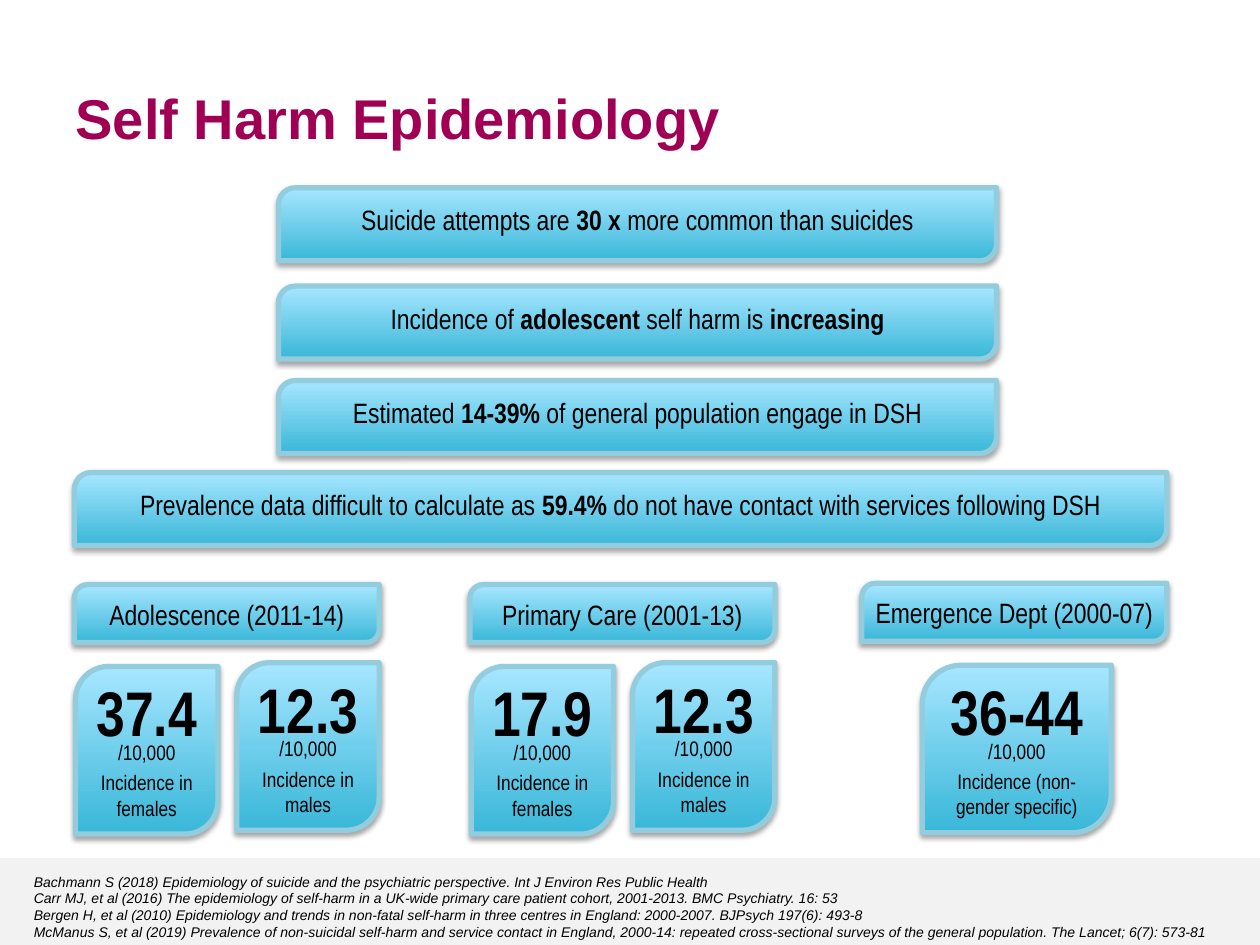
from dataclasses import dataclass

from lxml.etree import SubElement
from pptx import Presentation
from pptx.dml.color import RGBColor
from pptx.enum.shapes import MSO_SHAPE
from pptx.enum.text import MSO_ANCHOR, PP_ALIGN
from pptx.oxml.ns import qn
from pptx.util import Inches, Pt


@dataclass(frozen=True)
class Theme:
    title: str = "A00054"
    ink: str = "000000"
    edge: str = "93CDDD"
    deep: str = "39B7D8"
    pale: str = "A7E6FF"
    band: str = "F2F2F2"
    head: str = "Arial"
    body: str = "Arial Narrow"
    title_size: int = 32
    figure_size: int = 36
    text_size: int = 16
    note_size: int = 12
    cite_size: int = 8


class Deck:
    """Draws styled elements on a slide grid of 100 columns by 75 rows."""

    def __init__(self, theme):
        self.theme = theme
        self.file = Presentation()
        self.file.slide_width, self.file.slide_height = Inches(10), Inches(7.5)
        self.slide = self.file.slides.add_slide(self.file.slide_layouts[5])

    def place(self, left, top, width, height):
        col, row = self.file.slide_width / 100, self.file.slide_height / 75
        return [round(n) for n in (left * col, top * row, width * col, height * row)]

    def style(self, run, size, color, face, bold=False, italic=False):
        font = run.font
        font.name, font.size = face, Pt(size)
        font.bold, font.italic = bold, italic
        font.color.rgb = RGBColor.from_string(color)

    def title(self, text, *spot):
        shape = self.slide.shapes.title
        shape.left, shape.top, shape.width, shape.height = self.place(*spot)
        frame = shape.text_frame
        frame.text = text
        frame.vertical_anchor = MSO_ANCHOR.MIDDLE
        para = frame.paragraphs[0]
        para.alignment = PP_ALIGN.LEFT
        look = self.theme
        self.style(para.runs[0], look.title_size, look.title, look.head, bold=True)

    def text(self, lines, size, *spot, face=None, align=PP_ALIGN.CENTER, gap=0, italic=False):
        frame = self.slide.shapes.add_textbox(*self.place(*spot)).text_frame
        frame.word_wrap = True
        for index, line in enumerate(lines):
            para = frame.add_paragraph() if index else frame.paragraphs[0]
            para.alignment = align
            if index:
                para.space_before = Pt(gap)
            for part, words in enumerate(line.split("**")):
                if words:
                    run = para.add_run()
                    run.text = words
                    self.style(run, size, self.theme.ink, face or self.theme.body,
                               bold=part % 2 == 1, italic=italic)

    def band(self, *spot):
        shape = self.slide.shapes.add_shape(MSO_SHAPE.RECTANGLE, *self.place(*spot))
        shape.shadow.inherit = False
        shape.fill.solid()
        shape.fill.fore_color.rgb = RGBColor.from_string(self.theme.band)
        shape.line.fill.background()

    def panel(self, *spot):
        shape = self.slide.shapes.add_shape(
            MSO_SHAPE.ROUND_2_DIAG_RECTANGLE, *self.place(*spot))
        shape.adjustments[0], shape.adjustments[1] = 0.231, 0
        shape.fill.gradient()
        shape.fill.gradient_angle = 90
        for stop, color in zip(shape.fill.gradient_stops, (self.theme.deep, self.theme.pale)):
            stop.color.rgb = RGBColor.from_string(color)
        shape.line.color.rgb = RGBColor.from_string(self.theme.edge)
        shape.line.width = Pt(3)
        self.shade(shape)

    def shade(self, shape):
        shape.shadow.inherit = False
        effects = shape._element.spPr.find(qn("a:effectLst"))
        outer = SubElement(effects, qn("a:outerShdw"), blurRad=str(Pt(3.1)),
                           dist=str(Pt(1.8)), dir="5400000", rotWithShape="0")
        color = SubElement(outer, qn("a:srgbClr"), val=self.theme.ink)
        SubElement(color, qn("a:alpha"), val="35000")

    def bar(self, line, left, top, width, height=5.8, drop=0.7):
        self.panel(left, top, width, height)
        self.text([line], self.theme.text_size, left, top + drop, width, 3.8)

    def card(self, figure, note, left, top, width):
        self.panel(left, top, width, 13.3)
        self.text(["/10,000", note], self.theme.note_size, left, top + 5.3, width, 3.3, gap=3)
        self.text([f"**{figure}**"], self.theme.figure_size, left, top + 0.1, width, 7.3)

    def cites(self, lines, *spot):
        self.text(lines, self.theme.cite_size, *spot, face=self.theme.head,
                  align=PP_ALIGN.LEFT, italic=True)


FACTS = [
    ("Suicide attempts are **30 x** more common than suicides", 22.1, 14.9, 57),
    ("Incidence of **adolescent** self harm is **increasing**", 22.1, 22.7, 57),
    ("Estimated **14-39%** of general population engage in DSH", 22.1, 30.2, 57),
    ("Prevalence data difficult to calculate as **59.4%** do not have contact"
     " with services following DSH", 5.9, 37.5, 86.7),
]
FEMALE, MALE = "Incidence in females", "Incidence in males"
GROUPS = [
    ("Adolescence (2011-14)", 5.9, 46.4,
     [("37.4", FEMALE, 0.1, 52.9, 11.3), ("12.3", MALE, 12.9, 52.6, 11.3)]),
    ("Primary Care (2001-13)", 37.3, 46.4,
     [("17.9", FEMALE, 0.1, 52.9, 11.3), ("12.3", MALE, 12.9, 52.6, 11.3)]),
    ("Emergence Dept (2000-07)", 68.4, 46.3,
     [("36-44", "Incidence (non-gender specific)", 4.8, 52.8, 15)]),
]
CITES = [
    "Bachmann S (2018) Epidemiology of suicide and the psychiatric perspective."
    " Int J Environ Res Public Health",
    "Carr MJ, et al (2016) The epidemiology of self-harm in a UK-wide primary care"
    " patient cohort, 2001-2013. BMC Psychiatry. 16: 53",
    "Bergen H, et al (2010) Epidemiology and trends in non-fatal self-harm in three"
    " centres in England: 2000-2007. BJPsych 197(6): 493-8",
    "McManus S, et al (2019) Prevalence of non-suicidal self-harm and service contact in"
    " England, 2000-14: repeated cross-sectional surveys of the general population."
    " The Lancet; 6(7): 573-81",
]


def main():
    deck = Deck(Theme())
    deck.band(0, 68.1, 100, 6.9)
    deck.title("Self Harm Epidemiology", 5, 5.6, 85, 7.4)
    for fact in FACTS:
        deck.bar(*fact)
    for name, left, top, cards in GROUPS:
        deck.bar(name, left, top, 24.2, height=4.6, drop=0.5)
        for figure, note, shift, row, width in cards:
            deck.card(figure, note, left + shift, row, width)
    deck.cites(CITES, 1.7, 68.8, 97.4, 6.2)
    deck.file.save("out.pptx")


if __name__ == "__main__":
    main()
